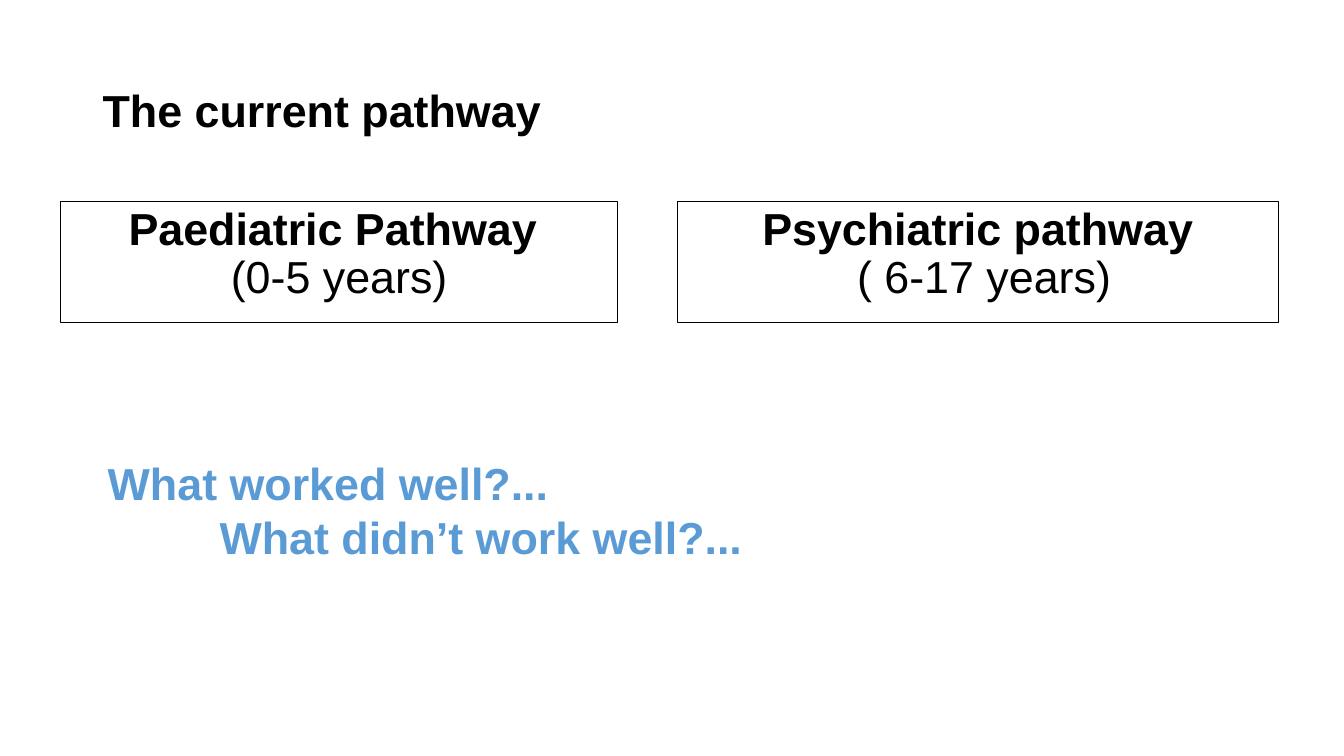
from pptx import Presentation
from pptx.dml.color import RGBColor
from pptx.enum.shapes import MSO_SHAPE as Shape
from pptx.enum.text import MSO_ANCHOR as Anchor, PP_ALIGN as Align
from pptx.util import Inches, Pt

BLACK, BLUE, WHITE = "000000", "5B9BD5", "FFFFFF"
TITLE = "The current pathway"
PATHWAYS = [
    (0.6, 5.53, "Paediatric Pathway ", "(0-5 years)"),
    (6.72, 5.96, "Psychiatric pathway", " ( 6-17 years)"),
]
QUESTIONS = [("What worked well?...", 0), ("What didn’t work well?...", 1.11)]


def rgb(value):
    return RGBColor.from_string(value)


def write(frame, lines, color, anchor=Anchor.TOP, align=Align.LEFT, spacing=1.0):
    frame.word_wrap = True
    frame.vertical_anchor = anchor
    for number, (text, bold, indent) in enumerate(lines):
        line = frame.paragraphs[0] if number == 0 else frame.add_paragraph()
        line.alignment = align
        line.line_spacing = spacing
        if indent:
            line._p.get_or_add_pPr().set("marL", str(Inches(indent)))
        run = line.add_run()
        run.text = text
        run.font.name = "Arial"
        run.font.size = Pt(32)
        run.font.bold = bold
        run.font.color.rgb = rgb(color)


def add_words(slide, place, lines, color, **layout):
    words = slide.shapes.add_textbox(*map(Inches, place))
    write(words.text_frame, lines, color, **layout)


def add_pathway(slide, left, width, name, ages):
    pathway = slide.shapes.add_shape(
        Shape.RECTANGLE, Inches(left), Inches(2), Inches(width), Inches(1.2))
    pathway.shadow.inherit = False
    pathway.fill.background()
    pathway.line.color.rgb = rgb(BLACK)
    pathway.line.width = Pt(0.75)
    write(pathway.text_frame, [(name, True, 0), (ages, False, 0)], BLACK,
          align=Align.CENTER, spacing=0.9)


def main():
    deck = Presentation()
    deck.slide_width, deck.slide_height = Inches(13.33), Inches(7.5)
    slide = deck.slides.add_slide(deck.slide_layouts[6])
    slide.background.fill.solid()
    slide.background.fill.fore_color.rgb = rgb(WHITE)

    add_words(slide, (0.92, 0.4, 11.5, 1.45), [(TITLE, True, 0)], BLACK,
              anchor=Anchor.MIDDLE, spacing=0.9)
    for pathway in PATHWAYS:
        add_pathway(slide, *pathway)
    questions = [(text, True, indent) for text, indent in QUESTIONS]
    add_words(slide, (0.97, 4.47, 6.67, 1.18), questions, BLUE)

    deck.save("out.pptx")


if __name__ == "__main__":
    main()
